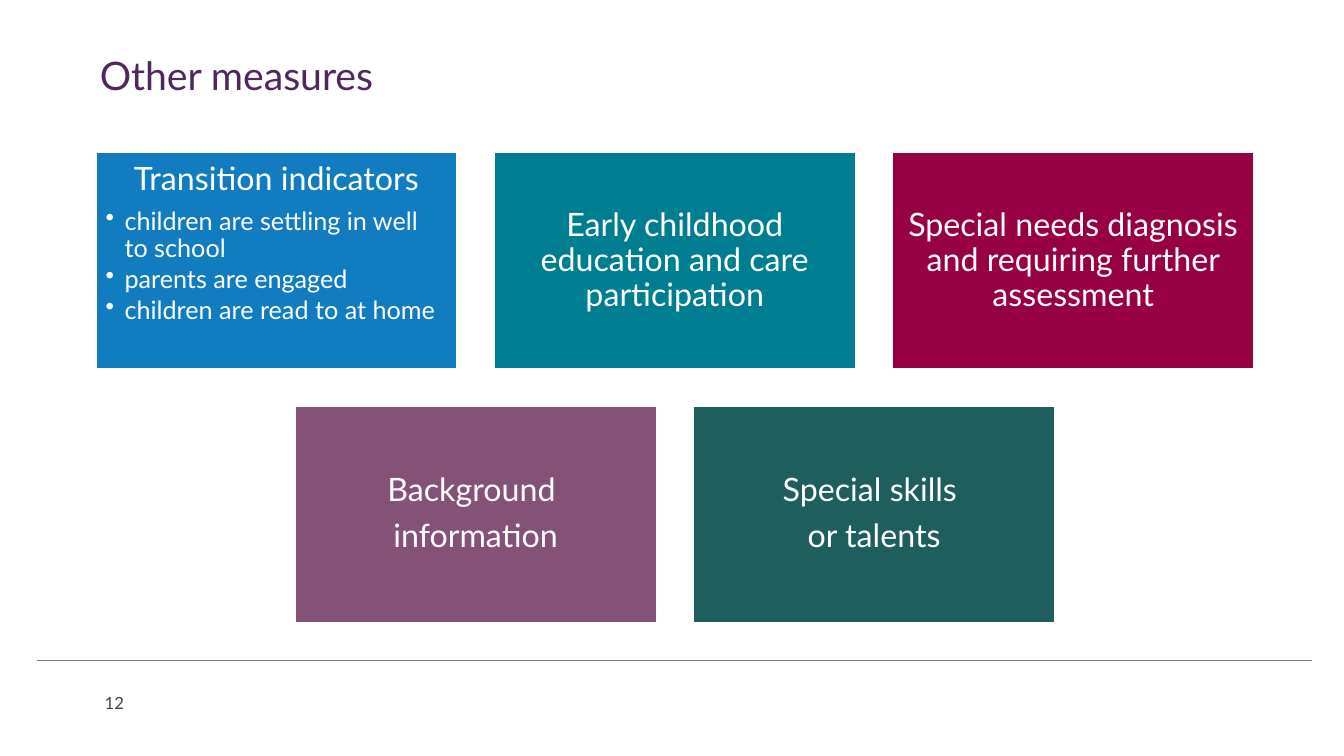
from lxml import etree
from pptx import Presentation
from pptx.dml.color import RGBColor
from pptx.enum.shapes import MSO_CONNECTOR, MSO_SHAPE
from pptx.enum.text import MSO_ANCHOR, MSO_AUTO_SIZE, PP_ALIGN
from pptx.oxml.ns import qn
from pptx.util import Cm, Pt

RECT, STRAIGHT = MSO_SHAPE.RECTANGLE, MSO_CONNECTOR.STRAIGHT
TOP, MIDDLE = MSO_ANCHOR.TOP, MSO_ANCHOR.MIDDLE
LEFT, CENTER = PP_ALIGN.LEFT, PP_ALIGN.CENTER

WHITE = RGBColor(0xFF, 0xFF, 0xFF)
GREY = RGBColor(0x80, 0x80, 0x80)
DARK_GREY = RGBColor(0x45, 0x43, 0x47)
PURPLE = RGBColor(0x4E, 0x28, 0x5B)
BLUE = RGBColor(0x12, 0x7C, 0xC0)
TEAL = RGBColor(0x00, 0x7E, 0x91)
CRIMSON = RGBColor(0x98, 0x00, 0x44)
MAUVE = RGBColor(0x84, 0x52, 0x78)
GREEN = RGBColor(0x1E, 0x5E, 0x5E)

CARD_W, CARD_H, GAP = 9.12, 5.47, 0.92
CARDS_LEFT, CARDS_TOP = 2.41, 3.84

# Each card: fill, centred lines, bullet points
CARD_ROWS = [
    [
        (BLUE, ["Transition indicators"],
         ["children are settling in well to school",
          "parents are engaged",
          "children are read to at home"]),
        (TEAL, ["Early childhood education and care participation"], []),
        (CRIMSON, ["Special needs diagnosis and requiring further assessment"], []),
    ],
    [
        (MAUVE, ["Background ", "information"], []),
        (GREEN, ["Special skills ", "or talents"], []),
    ],
]


def write(p, text, size, color, font="Lato", align=LEFT, spacing=None,
          after=0, bullet=False):
    if bullet:
        pPr = p._p.get_or_add_pPr()
        pPr.set("marL", str(Cm(0.48)))
        pPr.set("indent", str(-Cm(0.48)))
        etree.SubElement(pPr, qn("a:buChar")).set("char", "•")
    p.alignment = align
    p.line_spacing = spacing
    p.space_before = Pt(0)
    p.space_after = Pt(after)
    r = p.add_run()
    r.text = text
    r.font.name = font
    r.font.size = Pt(size)
    r.font.color.rgb = color


class SlideBuilder:
    def __init__(self, prs):
        self.s = prs.slides.add_slide(prs.slide_layouts[5])

    def title(self, text, x, y, w, h):
        sp = self.s.shapes.title
        sp.left, sp.top, sp.width, sp.height = Cm(x), Cm(y), Cm(w), Cm(h)
        tf = sp.text_frame
        tf.auto_size = MSO_AUTO_SIZE.NONE
        tf.vertical_anchor = TOP
        write(tf.paragraphs[0], text, 28, PURPLE, spacing=Pt(43.9), after=14.6)

    def label(self, text, x, y, w, h):
        tf = self.s.shapes.add_textbox(Cm(x), Cm(y), Cm(w), Cm(h)).text_frame
        tf.word_wrap = True
        write(tf.paragraphs[0], text, 12, DARK_GREY)

    def rule(self, x1, x2, y):
        line = self.s.shapes.add_connector(STRAIGHT, Cm(x1), Cm(y), Cm(x2), Cm(y))
        line.line.color.rgb = GREY
        line.line.width = Pt(1)
        etree.SubElement(line._element.spPr, qn("a:effectLst"))

    def card(self, x, y, fill, lines, bullets):
        sp = self.s.shapes.add_shape(RECT, Cm(x), Cm(y), Cm(CARD_W), Cm(CARD_H))
        sp.shadow.inherit = False
        sp.fill.solid()
        sp.fill.fore_color.rgb = fill
        sp.line.color.rgb = WHITE
        sp.line.width = Pt(1.5)
        tf = sp.text_frame
        tf.word_wrap = True
        tf.vertical_anchor = TOP if bullets else MIDDLE
        tf.margin_left = tf.margin_right = Cm(0.25)
        tf.margin_top = tf.margin_bottom = Cm(0.25)
        heading = dict(size=23, align=CENTER, after=8.05)
        item = dict(size=18, after=2.7, bullet=True)
        texts = [(t, heading) for t in lines] + [(t, item) for t in bullets]
        for i, (text, style) in enumerate(texts):
            p = tf.add_paragraph() if i else tf.paragraphs[0]
            write(p, text, color=WHITE, spacing=0.9, **style)


def main():
    prs = Presentation()
    prs.slide_width, prs.slide_height = Cm(33.87), Cm(19.05)
    slide = SlideBuilder(prs)
    slide.rule(0.94, 33.07, 16.64)
    slide.label("12", 2.39, 17.32, 1.4, 0.76)
    slide.title("Other measures", 2.26, 0.79, 29.18, 2.01)
    for row, cards in enumerate(CARD_ROWS):
        for col, card in enumerate(cards):
            x = CARDS_LEFT + (col + row / 2) * (CARD_W + GAP)
            y = CARDS_TOP + row * (CARD_H + GAP)
            slide.card(x, y, *card)
    prs.save("out.pptx")


if __name__ == "__main__":
    main()
